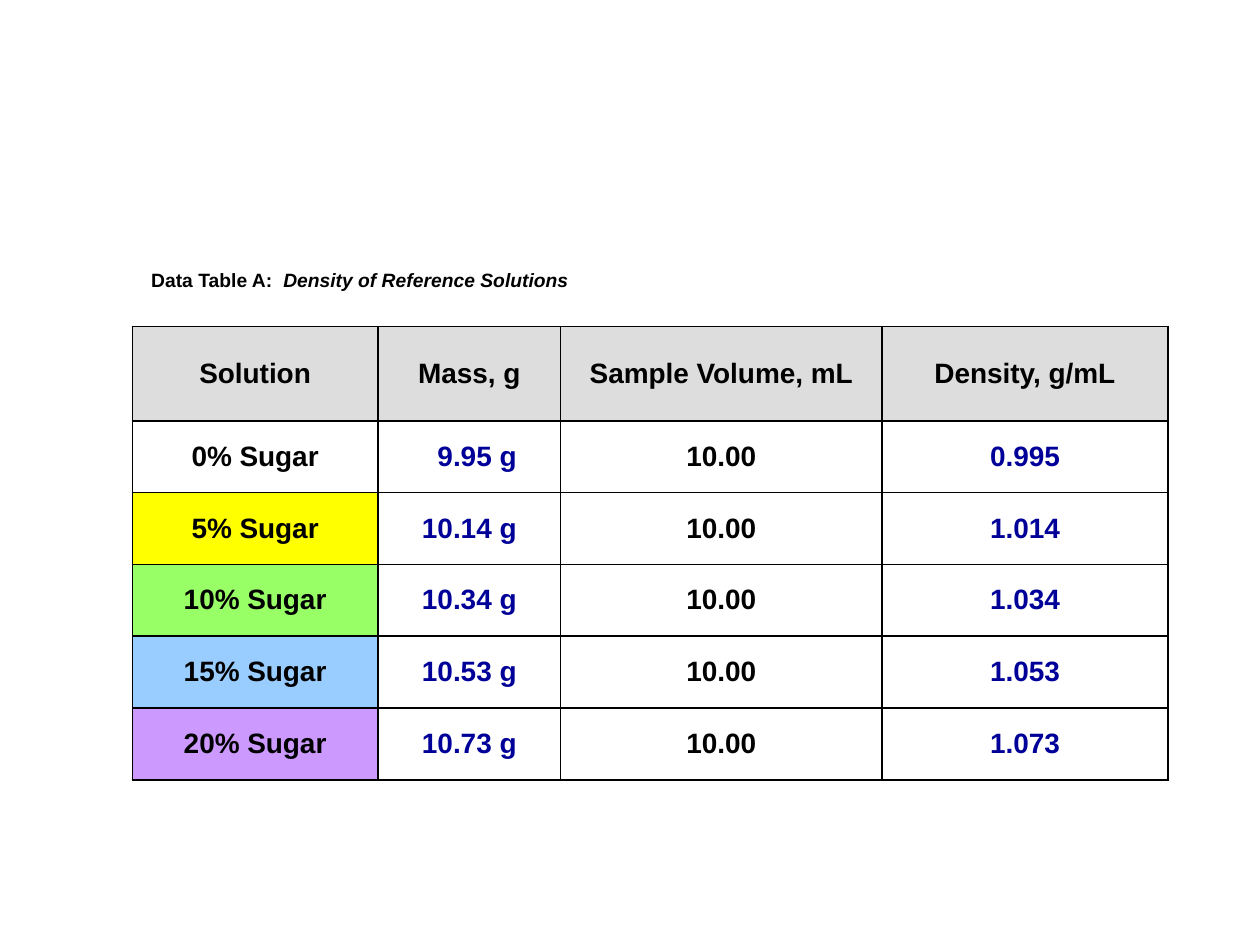
from pptx import Presentation
from pptx.dml.color import RGBColor
from pptx.enum.text import MSO_ANCHOR, MSO_AUTO_SIZE, PP_ALIGN
from pptx.oxml import parse_xml
from pptx.oxml.ns import nsdecls
from pptx.util import Inches, Pt

BLACK = RGBColor(0x00, 0x00, 0x00)
WHITE = RGBColor(0xFF, 0xFF, 0xFF)
NAVY = RGBColor(0x00, 0x00, 0x99)
GREY = RGBColor(0xDD, 0xDD, 0xDD)
YELLOW = RGBColor(0xFF, 0xFF, 0x00)
GREEN = RGBColor(0x99, 0xFF, 0x66)
BLUE = RGBColor(0x99, 0xCC, 0xFF)
PURPLE = RGBColor(0xCC, 0x99, 0xFF)

HEADERS = ["Solution", "Mass, g", "Sample Volume, mL", "Density, g/mL"]
SOLUTIONS = [
    ("0% Sugar", "9.95 g", "10.00", "0.995", WHITE),
    ("5% Sugar", "10.14 g", "10.00", "1.014", YELLOW),
    ("10% Sugar", "10.34 g", "10.00", "1.034", GREEN),
    ("15% Sugar", "10.53 g", "10.00", "1.053", BLUE),
    ("20% Sugar", "10.73 g", "10.00", "1.073", PURPLE),
]
COLUMN_WIDTHS = [1.95, 1.45, 2.55, 2.27]
HEADER_HEIGHT, ROW_HEIGHT = 0.75, 0.57
MASS_COLUMN = 1
TEXT_COLORS = [BLACK, NAVY, BLACK, NAVY]


class SlideBuilder:
    """Holds the text style and the current slide."""

    font = "Arial"
    border_width = Pt(1)

    def __init__(self, s):
        self.s = s

    def run(self, p, text, size, color=BLACK, italic=False):
        r = p.add_run()
        r.text = text
        r.font.name = self.font
        r.font.size = Pt(size)
        r.font.bold = True
        r.font.italic = italic
        r.font.color.rgb = color

    def title(self, x, y, w, h, parts, size):
        sp = self.s.shapes.title
        sp.left, sp.top, sp.width, sp.height = map(Inches, (x, y, w, h))
        tf = sp.text_frame
        tf.word_wrap = False
        tf.auto_size = MSO_AUTO_SIZE.NONE
        tf.vertical_anchor = MSO_ANCHOR.TOP
        p = tf.paragraphs[0]
        p.alignment = PP_ALIGN.LEFT
        for text, italic in parts:
            self.run(p, text, size, italic=italic)

    def table(self, x, y, widths, heights):
        frame = self.s.shapes.add_table(
            len(heights), len(widths), Inches(x), Inches(y),
            Inches(sum(widths)), Inches(sum(heights)))
        table = frame.table
        for column, width in zip(table.columns, widths):
            column.width = Inches(width)
        for row, height in zip(table.rows, heights):
            row.height = Inches(height)
        return table

    def cell(self, cell, text, fill, color=BLACK, align=PP_ALIGN.CENTER):
        cell.vertical_anchor = MSO_ANCHOR.MIDDLE
        p = cell.text_frame.paragraphs[0]
        p.alignment = align
        self.run(p, text, 16, color)
        self.borders(cell)
        cell.fill.solid()
        cell.fill.fore_color.rgb = fill

    def borders(self, cell):
        tcPr = cell._tc.get_or_add_tcPr()
        for side in ("lnL", "lnR", "lnT", "lnB"):
            tcPr.append(parse_xml(
                f'<a:{side} {nsdecls("a")} w="{self.border_width}"><a:solidFill>'
                f'<a:srgbClr val="{BLACK}"/></a:solidFill></a:{side}>'))


def main():
    prs = Presentation()
    prs.slide_width, prs.slide_height = Inches(10), Inches(7.5)
    builder = SlideBuilder(prs.slides.add_slide(prs.slide_layouts[5]))

    # Table caption
    builder.title(1.1, 2.08, 3.52, 0.59, [
        ("Data Table A:  ", False),
        ("Density of Reference Solutions", True),
    ], size=11)

    # Density table: header row
    heights = [HEADER_HEIGHT] + [ROW_HEIGHT] * len(SOLUTIONS)
    table = builder.table(1.05, 2.59, COLUMN_WIDTHS, heights)
    for col, header in enumerate(HEADERS):
        builder.cell(table.cell(0, col), header, GREY)

    # One row per solution, masses aligned on the right
    for row, (*values, solution_fill) in enumerate(SOLUTIONS, start=1):
        for col, value in enumerate(values):
            cell = table.cell(row, col)
            align = PP_ALIGN.CENTER
            if col == MASS_COLUMN:
                align = PP_ALIGN.RIGHT
                cell.margin_right = Inches(0.35)
            fill = solution_fill if col == 0 else WHITE
            builder.cell(cell, value, fill, TEXT_COLORS[col], align)

    prs.save("out.pptx")


if __name__ == "__main__":
    main()
